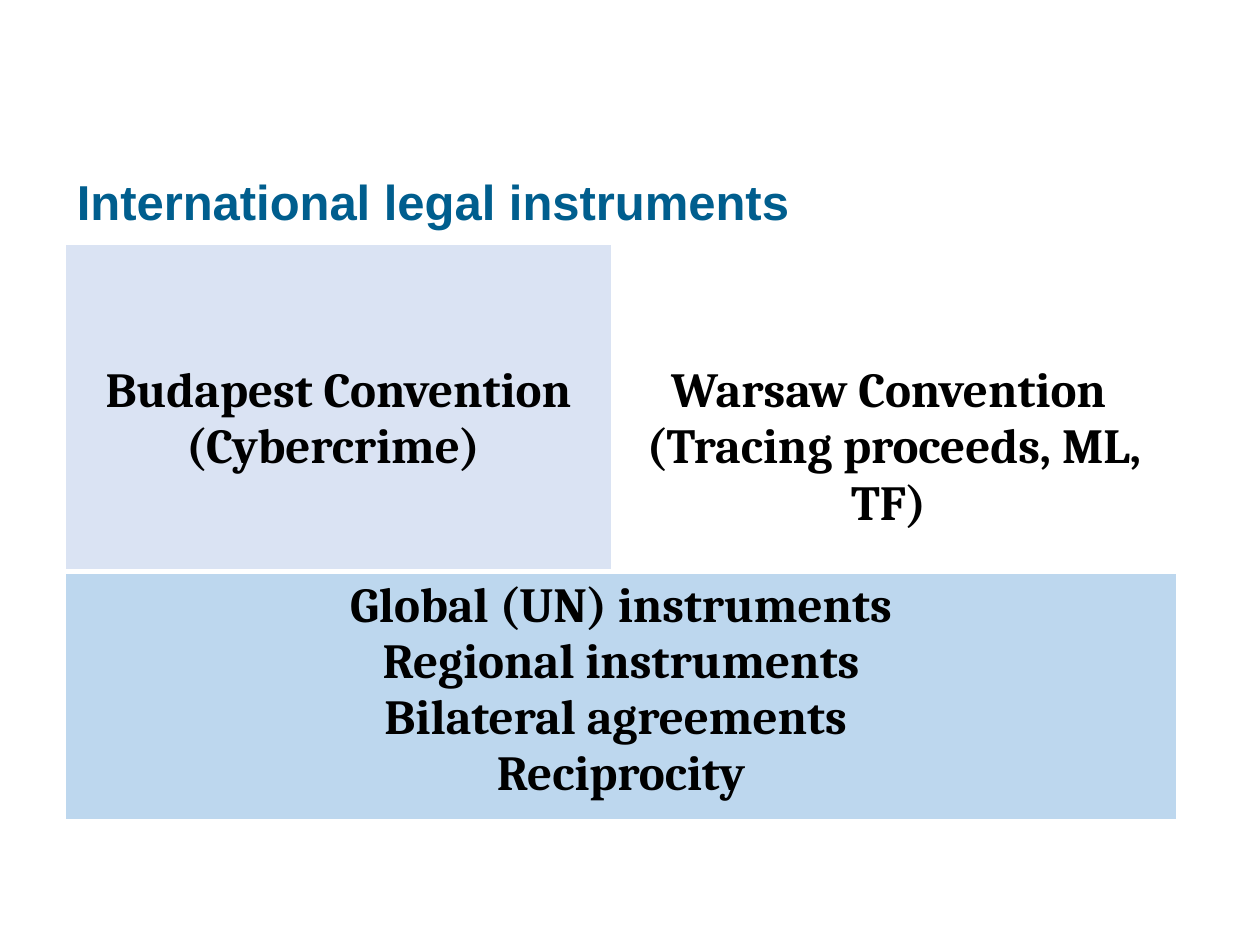
from lxml.etree import fromstring
from pptx import Presentation
from pptx.dml.color import RGBColor
from pptx.enum.text import MSO_ANCHOR, PP_ALIGN
from pptx.oxml.ns import nsdecls
from pptx.util import Pt

COLORS = {
    "title": "005E8E",
    "text": "000000",
    "border": "FFFFFF",
    "convention": "DAE3F3",
    "instruments": "BDD7EE",
}


def format_paragraph(paragraph, font_name, color, alignment):
    """Apply the bold 28-point style used across the slide."""
    paragraph.alignment = alignment
    for run in paragraph.runs:
        run.font.name = font_name
        run.font.size = Pt(28)
        run.font.bold = True
        run.font.color.rgb = RGBColor.from_string(COLORS[color])


def add_title(slide, text, left, top, width, height):
    """Place and format the title placeholder."""
    title = slide.shapes.title
    title.left, title.top, title.width, title.height = left, top, width, height
    text_frame = title.text_frame
    text_frame.text = text
    text_frame.word_wrap = True
    text_frame.vertical_anchor = MSO_ANCHOR.MIDDLE
    paragraph = text_frame.paragraphs[0]
    paragraph.line_spacing = 0.9
    format_paragraph(paragraph, "Arial", "title", PP_ALIGN.LEFT)


def set_borders(cell, bottom_width):
    """Draw white borders around a cell."""
    properties = cell._tc.get_or_add_tcPr()
    widths = {"lnL": Pt(1), "lnR": Pt(1), "lnT": Pt(1), "lnB": bottom_width}
    for position, (side, width) in enumerate(widths.items()):
        line = fromstring(
            f'<a:{side} {nsdecls("a")} w="{int(width)}"><a:solidFill>'
            f'<a:srgbClr val="{COLORS["border"]}"/></a:solidFill></a:{side}>'
        )
        properties.insert(position, line)


def fill_cell(cell, lines, fill, margin_top, bottom_width):
    """Write centred lines in a cell and set its fill and borders."""
    cell.text_frame.text = "\n".join(lines)
    cell.margin_top = margin_top
    cell.vertical_anchor = MSO_ANCHOR.TOP
    for paragraph in cell.text_frame.paragraphs:
        format_paragraph(paragraph, "Cambria", "text", PP_ALIGN.CENTER)
    if fill:
        cell.fill.solid()
        cell.fill.fore_color.rgb = RGBColor.from_string(COLORS[fill])
    else:
        cell.fill.background()
    set_borders(cell, bottom_width)


def add_instruments_table(slide, left, top, width, height):
    """Add the two conventions above the merged row of other instruments."""
    table = slide.shapes.add_table(2, 2, left, top, width, height).table
    table.first_row = False
    table.horz_banding = False
    table.columns[0].width = Pt(312)
    table.columns[1].width = width - Pt(312)
    table.rows[0].height = Pt(187)
    table.rows[1].height = height - Pt(187)
    table.cell(1, 0).merge(table.cell(1, 1))

    conventions = [
        (["Budapest Convention", "(Cybercrime) "], "convention"),
        (["Warsaw Convention ", "(Tracing proceeds, ML, TF) "], None),
    ]
    for column, (lines, fill) in enumerate(conventions):
        fill_cell(table.cell(0, column), lines, fill, Pt(68), Pt(3))
    instruments = [
        "Global (UN) instruments",
        "Regional instruments",
        "Bilateral agreements ",
        "Reciprocity",
    ]
    fill_cell(table.cell(1, 0), instruments, "instruments", Pt(3.6), Pt(1))


def main():
    """Build and save the slide."""
    presentation = Presentation()
    presentation.slide_width, presentation.slide_height = Pt(720), Pt(540)
    slide = presentation.slides.add_slide(presentation.slide_layouts[5])
    add_title(slide, "International legal instruments",
              Pt(36.7), Pt(82.8), Pt(648), Pt(67.7))
    add_instruments_table(slide, Pt(37.4), Pt(139.7), Pt(635), Pt(329))
    presentation.save("out.pptx")


if __name__ == "__main__":
    main()
